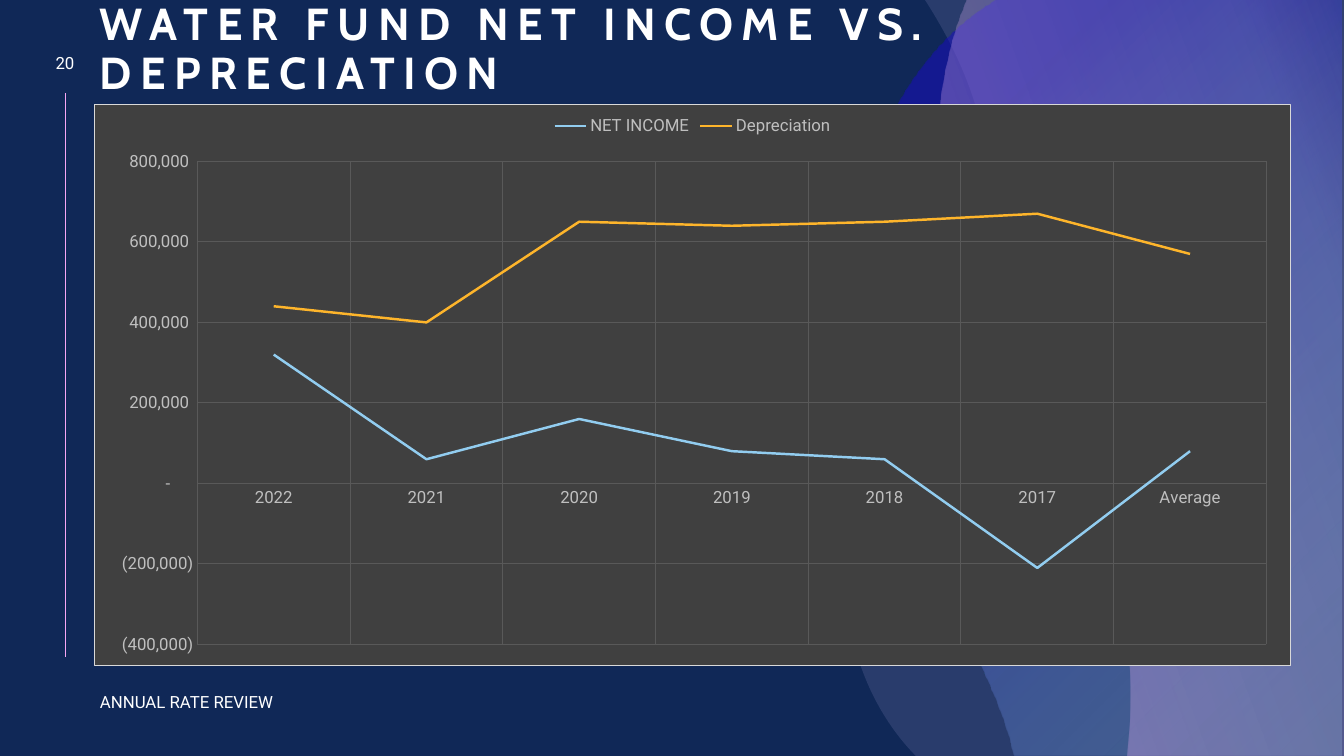
from pptx import Presentation, util as u
from pptx.chart.data import CategoryChartData
from pptx.dml.color import RGBColor
from pptx.enum import shapes, text
from pptx.enum.chart import XL_CHART_TYPE, XL_LEGEND_POSITION, XL_TICK_MARK
from pptx.oxml import parse_xml
from pptx.oxml.ns import nsdecls, qn

# Content
HEX = {"navy": "102857", "pink": "F6A6F4", "lilac": "C3B9F2", "sky": "92CDF0",
       "blue": "180DC2", "amber": "FEB52B", "white": "FFFFFF", "panel": "404040",
       "grid": "595959", "label": "BFBFBF", "edge": "D9D9D9"}
BODY, HEAD = "Roboto", "Cabin"

# text, box, size, font, bold, tracking, align, anchor
ALIGN, ANCHOR = text.PP_ALIGN, text.MSO_ANCHOR
TEXTS = [
    ("20", (36, 46, 58, 34), 12, BODY, False, 0, ALIGN.CENTER, ANCHOR.MIDDLE),
    ("ANNUAL RATE REVIEW", (90, 687, 257, 30), 12, BODY, False, 0, ALIGN.LEFT, ANCHOR.MIDDLE),
    ("WATER FUND NET INCOME VS. DEPRECIATION", (90, -14, 1255, 118), 32, HEAD, True, 600,
     ALIGN.LEFT, ANCHOR.BOTTOM),
]

YEARS = ["2022", "2021", "2020", "2019", "2018", "2017", "Average"]
SERIES = [
    ("NET INCOME", "sky", [320000, 60000, 160000, 80000, 60000, -210000, 80000]),
    ("Depreciation", "amber", [440000, 400000, 650000, 640000, 650000, 670000, 570000]),
]
FORMAT = '_(* #,##0_);_(* \\(#,##0\\);_(* "-"??_);_(@_)'
PANEL = (94, 104, 1197, 562)
PLOT = (197, 161, 1070, 484)
RULE = (65, 93, 65, 657)

# Waves as seen on the slide: a pair is a corner, a triple of pairs is a curve
WAVES = [
    {"turn": 270,
     "pts": [(925, 0), (1345, 0), (1345, 756), (916, 756), (915, 755),
             ((877, 716), (845, 653), (846, 573)), ((847, 430), (988, 369), (991, 217)),
             ((993, 122), (958, 52), (927, 3))],
     "stops": [(0, "lilac", 14)], "mode": ""},
    {"turn": 90,
     "pts": [(996, 0), (1341, 0), (1341, 756), (1014, 756), (1009, 737),
             ((964, 588), (847, 496), (846, 325)), ((845, 158), (916, 55), (981, 10))],
     "stops": [(4, "sky", 24), (79, "blue", 52)],
     "mode": '<a:path path="circle"><a:fillToRect l="100000" t="100000"/></a:path>'},
    {"turn": 90,
     "pts": [(967, 0), (1345, 0), (1345, 756), (1127, 756), (1129, 727),
             ((1130, 713), (1130, 700), (1130, 686)), ((1126, 462), (939, 371), (938, 160)),
             ((937, 107), (946, 59), (960, 18))],
     "stops": [(1, "pink", 38), (84, "lilac", 20), (100, "pink", 3)],
     "mode": '<a:lin ang="15000000" scaled="0"/>'},
]

SCALE = 914400 / 100.8


def px(*nums):
    return [u.Emu(round(n * SCALE)) for n in nums]


def rgb(name):
    return RGBColor.from_string(HEX[name])


def tint(name, alpha=100):
    return f'<a:srgbClr val="{HEX[name]}"><a:alpha val="{alpha * 1000}"/></a:srgbClr>'


def unturn(pts, turn):
    """Turn seen points back about their middle; each item becomes a list of points."""
    steps = [[item] if isinstance(item[0], int) else list(item) for item in pts]
    mid = [(min(axis) + max(axis)) / 2 for axis in zip(*(step[-1] for step in steps))]
    sign = 1 if turn == 90 else -1
    return [[px(mid[0] + sign * (y - mid[1]), mid[1] - sign * (x - mid[0]))
             for x, y in step] for step in steps]


def wave(slide, turn, pts, stops, mode):
    steps = unturn(pts, turn)
    ends = [step[-1] for step in steps]
    pen = slide.shapes.build_freeform(*ends[0], scale=1.0)
    pen.add_line_segments(ends[1:], close=True)
    shape = pen.convert_to_shape()
    shape.shadow.inherit = False
    shape.line.fill.background()

    # Bend the curved sides
    geom = shape._element.spPr.find(qn("a:custGeom"))
    for side, step in zip(list(geom.iter(qn("a:lnTo"))), steps[1:]):
        if len(step) == 3:
            dots = "".join(f'<a:pt x="{x - shape.left}" y="{y - shape.top}"/>' for x, y in step)
            side.getparent().replace(side, parse_xml(
                f'<a:cubicBezTo {nsdecls("a")}>{dots}</a:cubicBezTo>'))
    shape.rotation = turn

    if mode:
        marks = "".join(f'<a:gs pos="{p * 1000}">{tint(c, a)}</a:gs>' for p, c, a in stops)
        fill = (f'<a:gradFill {nsdecls("a")} rotWithShape="1"><a:gsLst>{marks}</a:gsLst>'
                f'{mode}</a:gradFill>')
    else:
        fill = f'<a:solidFill {nsdecls("a")}>{tint(*stops[0][1:])}</a:solidFill>'
    geom.addnext(parse_xml(fill))


def style(font, size, color, face=BODY):
    font.size, font.name = u.Pt(size), face
    font.color.rgb = rgb(color)


def label(slide, words, box, size, face, bold, track, align, anchor):
    frame = slide.shapes.add_textbox(*px(*box)).text_frame
    frame.word_wrap = True
    frame.vertical_anchor = anchor
    frame.text = words
    para = frame.paragraphs[0]
    para.alignment = align
    run = para.runs[0]
    style(run.font, size, "white", face)
    run.font.bold = bold
    if track:
        para.line_spacing = 0.9
        run.font._element.set("spc", str(track))


def graph(slide):
    data = CategoryChartData(number_format=FORMAT)
    data.categories = YEARS
    for name, _, vals in SERIES:
        data.add_series(name, vals)
    chart = slide.shapes.add_chart(XL_CHART_TYPE.LINE, *px(*PANEL), data).chart
    style(chart.font, 12, "label")
    chart.has_title = False
    chart.has_legend = True
    chart.legend.position = XL_LEGEND_POSITION.TOP
    chart.legend.include_in_layout = False
    style(chart.legend.font, 12, "label")

    # Series and axes
    plot = chart.plots[0]
    plot.vary_by_categories = False
    for line, (_, color, _) in zip(plot.series, SERIES):
        line.smooth = False
        line.format.line.color.rgb = rgb(color)
        line.format.line.width = u.Pt(1.75)
    for axis in (chart.category_axis, chart.value_axis):
        axis.major_tick_mark = axis.minor_tick_mark = XL_TICK_MARK.NONE
        axis.format.line.fill.background()
        axis.has_major_gridlines = True
        grid = axis.major_gridlines.format.line
        grid.color.rgb, grid.width = rgb("grid"), u.Pt(0.75)
        style(axis.tick_labels.font, 12, "label")
    scale = chart.value_axis
    scale.minimum_scale, scale.maximum_scale, scale.major_unit = -400000, 800000, 200000
    scale.tick_labels.number_format = FORMAT
    scale.tick_labels.number_format_is_linked = False

    # Panel fill, border and plot position
    root = chart._chartSpace
    root.find(qn("c:txPr")).addprevious(parse_xml(
        f'<c:spPr {nsdecls("c", "a")}><a:solidFill>{tint("panel")}</a:solidFill>'
        f'<a:ln w="9525"><a:solidFill>{tint("edge")}</a:solidFill></a:ln></c:spPr>'))
    left, top, wide, high = PANEL
    spot = {"x": (PLOT[0] - left) / wide, "y": (PLOT[1] - top) / high,
            "w": PLOT[2] / wide, "h": PLOT[3] / high}
    rows = "".join(f'<c:{k}Mode val="edge"/>' for k in "xy")
    rows += "".join(f'<c:{k} val="{v:.4f}"/>' for k, v in spot.items())
    area = root.find(".//" + qn("c:plotArea"))
    for old in area.findall(qn("c:layout")):
        area.remove(old)
    area.insert(0, parse_xml(
        f'<c:layout {nsdecls("c")}><c:manualLayout><c:layoutTarget val="inner"/>'
        f'{rows}</c:manualLayout></c:layout>'))


def main():
    deck = Presentation()
    deck.slide_width, deck.slide_height = px(1344, 756)
    slide = deck.slides.add_slide(deck.slide_layouts[6])
    slide.background.fill.solid()
    slide.background.fill.fore_color.rgb = rgb("navy")

    # Side rule and waves
    rule = slide.shapes.add_connector(shapes.MSO_CONNECTOR.STRAIGHT, *px(*RULE))
    rule.line.color.rgb, rule.line.width = rgb("pink"), u.Pt(0.5)
    rule._element.spPr.append(parse_xml(f'<a:effectLst {nsdecls("a")}/>'))
    for item in WAVES:
        wave(slide, **item)

    # Texts and chart
    for item in TEXTS:
        label(slide, *item)
    graph(slide)
    deck.save("out.pptx")


if __name__ == "__main__":
    main()
